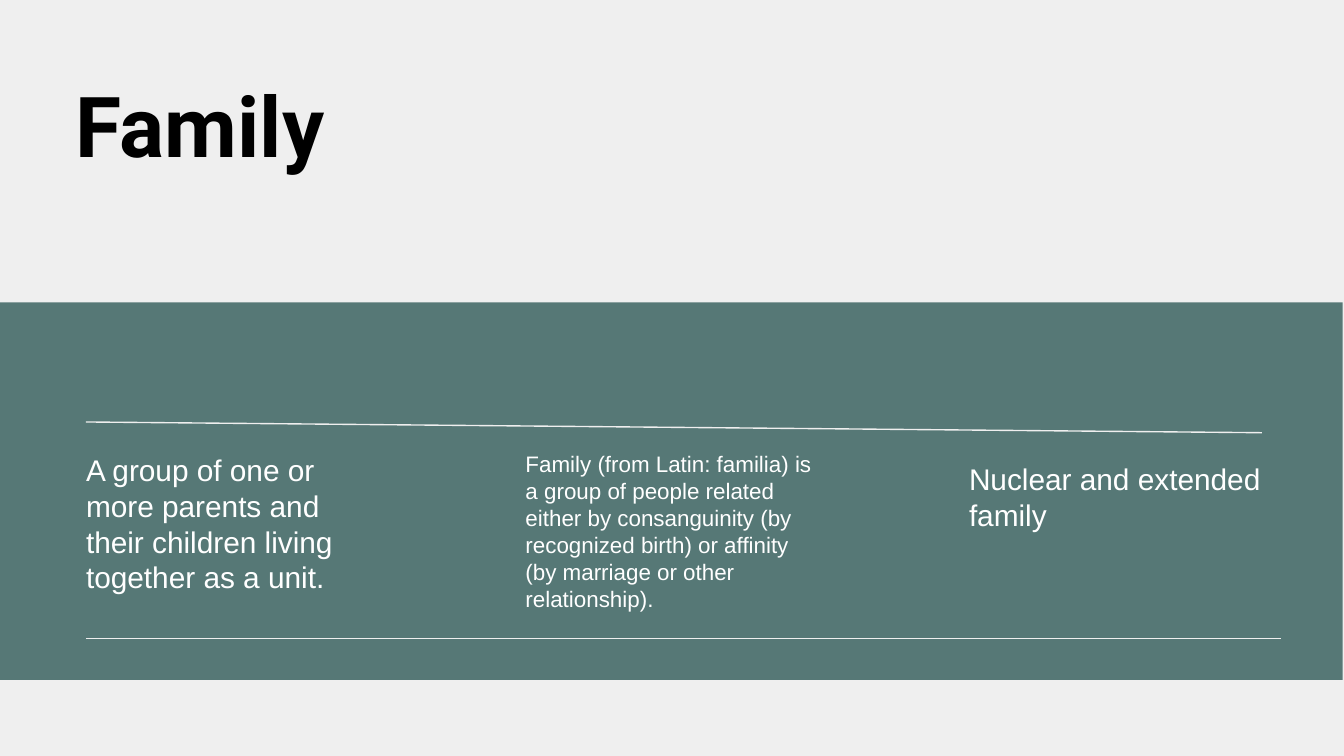
from lxml import etree
from pptx import Presentation
from pptx.dml.color import RGBColor
from pptx.enum.shapes import MSO_CONNECTOR, MSO_SHAPE
from pptx.enum.text import MSO_ANCHOR, PP_ALIGN
from pptx.oxml.ns import qn
from pptx.util import Inches, Pt

RECTANGLE = MSO_SHAPE.RECTANGLE
STRAIGHT = MSO_CONNECTOR.STRAIGHT
TOP = MSO_ANCHOR.TOP
LEFT = PP_ALIGN.LEFT

PALE = RGBColor(0xEF, 0xEF, 0xEF)
TEAL = RGBColor(0x56, 0x78, 0x76)
WHITE = RGBColor(0xFF, 0xFF, 0xFF)
BLACK = RGBColor(0x00, 0x00, 0x00)

COLUMN_WIDTH = 2.18
COLUMNS = [
    (0.65, 1.11, 1.08, 16,
     "A group of one or more parents and their children living together as a unit."),
    (3.92, 1.1, 1.21, 12,
     "Family (from Latin: familia) is a group of people related either by "
     "consanguinity (by recognized birth) or affinity (by marriage or other "
     "relationship)."),
    (7.22, 1.18, 0.54, 16, "Nuclear and extended family"),
]
RULES = [(0.65, 0.89, 9.4, 0.97), (0.65, 2.5, 9.54, 2.5)]


def set_text(shape, text, font_name, size, color, bold=False):
    """Fill a shape with one left-aligned paragraph without insets."""
    tf = shape.text_frame
    tf.word_wrap = True
    tf.vertical_anchor = TOP
    tf.margin_left = tf.margin_right = tf.margin_top = tf.margin_bottom = 0
    p = tf.paragraphs[0]
    p.text = text
    p.alignment = LEFT
    p.font.name = font_name
    p.font.size = Pt(size)
    p.font.bold = bold
    p.font.color.rgb = color


def add_title(s, left, top, width, height):
    """Place the slide title in the given box."""
    title = s.shapes.title
    title.left, title.top = Inches(left), Inches(top)
    title.width, title.height = Inches(width), Inches(height)
    set_text(title, "Family", "Roboto", 45, BLACK, bold=True)


def add_rule(s, x1, y1, x2, y2):
    """Draw a thin pale line without a shadow."""
    rule = s.shapes.add_connector(STRAIGHT, Inches(x1), Inches(y1), Inches(x2), Inches(y2))
    rule.line.color.rgb = PALE
    rule.line.width = Pt(0.75)
    etree.SubElement(rule._element.spPr, qn("a:effectLst"))


def add_definition_band(s, left, top, width, height):
    """Draw the coloured band with its rules and text columns."""
    band = s.shapes.add_shape(
        RECTANGLE, Inches(left), Inches(top), Inches(width), Inches(height))
    band.shadow.inherit = False
    band.fill.solid()
    band.fill.fore_color.rgb = TEAL
    band.line.fill.background()
    for x1, y1, x2, y2 in RULES:
        add_rule(s, left + x1, top + y1, left + x2, top + y2)
    for x, y, column_height, size, text in COLUMNS:
        column = s.shapes.add_textbox(
            Inches(left + x), Inches(top + y), Inches(COLUMN_WIDTH), Inches(column_height))
        set_text(column, text, "Arial", size, WHITE)


def main():
    """Build and save the slide."""
    prs = Presentation()
    prs.slide_width = Inches(10)
    prs.slide_height = prs.slide_width * 9 // 16
    s = prs.slides.add_slide(prs.slide_layouts[5])
    s.background.fill.solid()
    s.background.fill.fore_color.rgb = PALE
    add_definition_band(s, -0.01, 2.25, 10, 2.81)
    add_title(s, 0.56, 0.55, 4.07, 0.76)
    prs.save("out.pptx")


if __name__ == "__main__":
    main()
